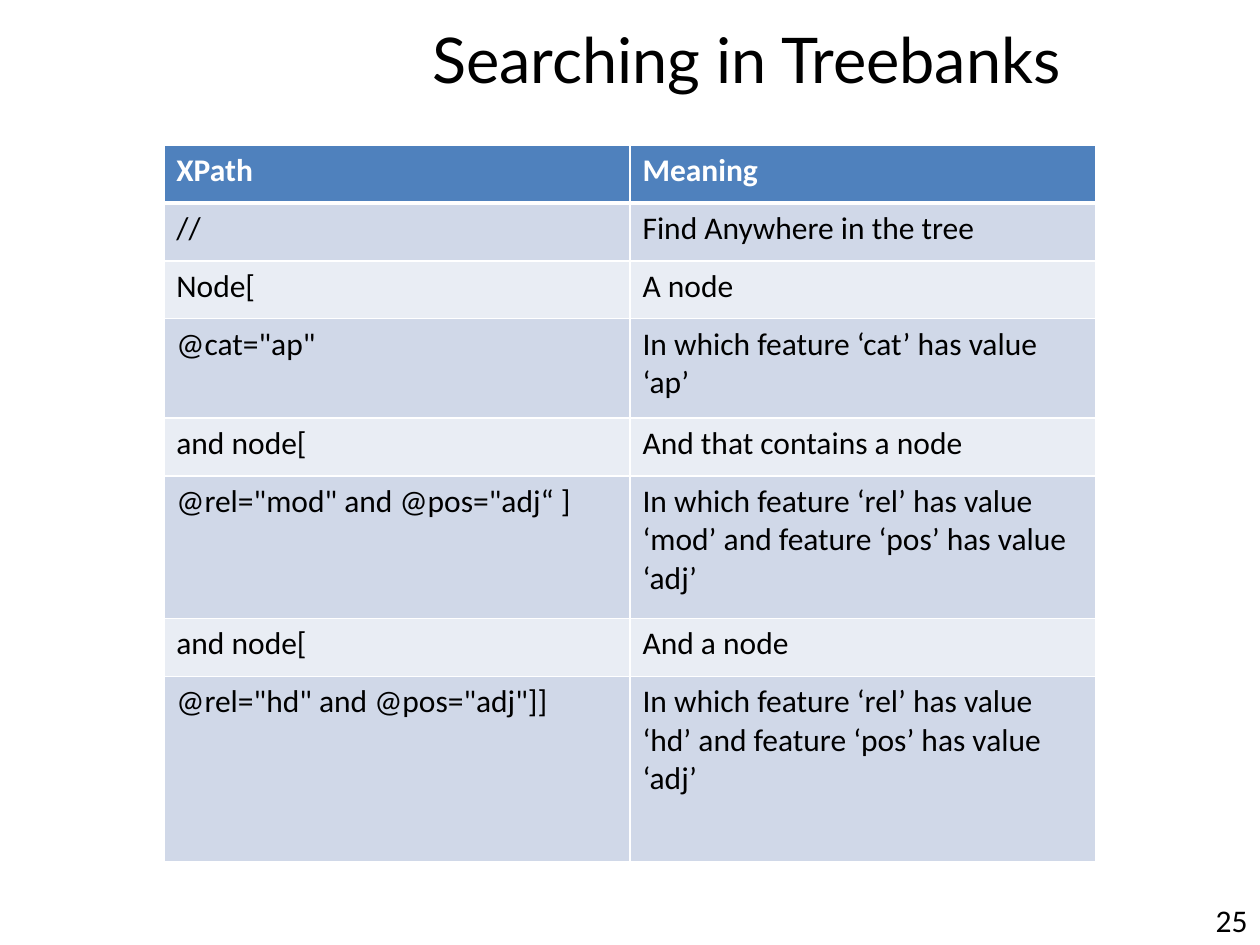
from lxml.etree import SubElement
from pptx import Presentation
from pptx.dml.color import RGBColor
from pptx.enum.text import MSO_ANCHOR, PP_ALIGN
from pptx.oxml.ns import qn
from pptx.util import Inches, Pt

COLORS = {
    "text": "000000",
    "header_text": "FFFFFF",
    "header": "4F81BD",
    "odd_row": "D0D8E8",
    "even_row": "E9EDF4",
    "border": "FFFFFF",
}

QUERY_PARTS = [
    ("XPath", "Meaning", 0.46),
    ("//", "Find Anywhere in the tree", 0.46),
    ("Node[", "A node", 0.46),
    ('@cat="ap"', "In which feature ‘cat’ has value ‘ap’", 0.79),
    ("and node[", "And that contains a node", 0.46),
    ('@rel="mod" and @pos="adj“ ]',
     "In which feature ‘rel’ has value ‘mod’ and feature ‘pos’ has value ‘adj’", 1.13),
    ("and node[", "And a node", 0.46),
    ('@rel="hd" and @pos="adj"]]',
     "In which feature ‘rel’ has value ‘hd’ and feature ‘pos’ has value ‘adj’", 1.47),
]


def color(name):
    return RGBColor.from_string(COLORS[name])


def add_run(paragraph, text, size=18, font="Calibri", color_name="text", bold=False):
    run = paragraph.add_run()
    run.text = text
    run.font.size = Pt(size)
    run.font.name = font
    run.font.bold = bold
    run.font.color.rgb = color(color_name)


def add_text(slide, left, top, width, height, text, align, anchor, **style):
    frame = slide.shapes.add_textbox(
        Inches(left), Inches(top), Inches(width), Inches(height)).text_frame
    frame.word_wrap = True
    frame.vertical_anchor = anchor
    paragraph = frame.paragraphs[0]
    paragraph.alignment = align
    add_run(paragraph, text, **style)


def set_borders(cell, bottom_width):
    """Draw the four cell borders; they must precede the fill in the XML."""
    properties = cell._tc.get_or_add_tcPr()
    for side, width in (("L", 1), ("R", 1), ("T", 1), ("B", bottom_width)):
        line = SubElement(properties, qn(f"a:ln{side}"), w=str(Pt(width)))
        fill = SubElement(line, qn("a:solidFill"))
        SubElement(fill, qn("a:srgbClr"), val=COLORS["border"])


def add_query_table(slide):
    table = slide.shapes.add_table(
        len(QUERY_PARTS), 2, Inches(1.3), Inches(1.15), Inches(7.4), Inches(5.67)).table
    for row_index, (xpath, meaning, height) in enumerate(QUERY_PARTS):
        is_header = row_index == 0
        band = "header" if is_header else "odd_row" if row_index % 2 else "even_row"
        table.rows[row_index].height = Inches(height)
        for column_index, text in enumerate((xpath, meaning)):
            cell = table.cell(row_index, column_index)
            set_borders(cell, 3 if is_header else 1)
            cell.fill.solid()
            cell.fill.fore_color.rgb = color(band)
            add_run(cell.text_frame.paragraphs[0], text, bold=is_header,
                    color_name="header_text" if is_header else "text")


def main():
    prs = Presentation()
    prs.slide_width = Inches(10)
    prs.slide_height = Inches(7.5)
    slide = prs.slides.add_slide(prs.slide_layouts[6])
    add_text(slide, 1.85, 0, 8.15, 0.92, "Searching in Treebanks",
             PP_ALIGN.CENTER, MSO_ANCHOR.MIDDLE, size=36, font="Lato")
    add_text(slide, 8.94, 7.1, 1.06, 0.4, "25", PP_ALIGN.RIGHT, MSO_ANCHOR.TOP)
    add_query_table(slide)
    prs.save("out.pptx")


if __name__ == "__main__":
    main()
